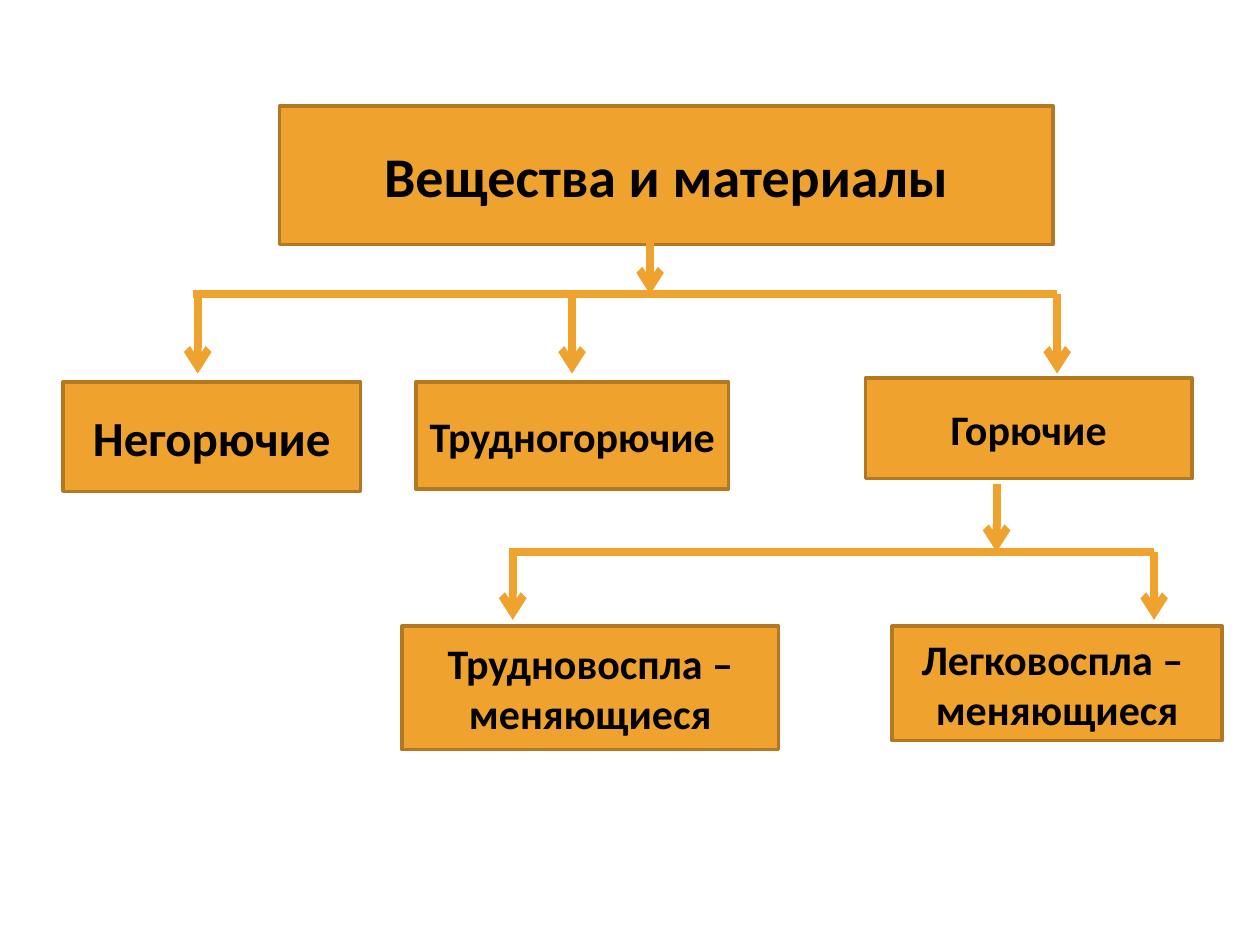
from lxml import etree
from pptx import Presentation
from pptx.dml.color import RGBColor
from pptx.enum.shapes import MSO_CONNECTOR, MSO_SHAPE
from pptx.enum.text import MSO_ANCHOR, PP_ALIGN
from pptx.oxml.ns import qn
from pptx.util import Pt

ORANGE, BROWN, BLACK = "F0A22E", "B27822", "000000"


def paint(color_format, hex_color):
    color_format.rgb = RGBColor.from_string(hex_color)


def fill_box(box, lines, size):
    box.fill.solid()
    paint(box.fill.fore_color, ORANGE)
    paint(box.line.color, BROWN)
    box.line.width = Pt(2)
    frame = box.text_frame
    frame.text = "\n".join(lines)
    frame.word_wrap = True
    frame.vertical_anchor = MSO_ANCHOR.MIDDLE
    for paragraph in frame.paragraphs:
        paragraph.alignment = PP_ALIGN.CENTER
        for name, value in {"name": "Calibri", "size": Pt(size), "bold": True}.items():
            setattr(paragraph.font, name, value)
        paint(paragraph.font.color, BLACK)


prs = Presentation()
prs.slide_width, prs.slide_height = Pt(720), Pt(540)
slide = prs.slides.add_slide(prs.slide_layouts[5])

# Root of the classification
root = slide.shapes.title
root_place = {"left": 159.8, "top": 60.5, "width": 442, "height": 79.2}
for name, value in root_place.items():
    setattr(root, name, Pt(value))
fill_box(root, ["Вещества и материалы"], 32)

# Classes and subclasses: left, top, width, height, text size, lines
categories = [
    (36, 218.2, 170, 62.6, 28, ["Негорючие"]),
    (229.7, 357.8, 215.3, 70.6, 24, ["Трудновоспла –", "меняющиеся"]),
    (509.8, 357.8, 188.6, 65.5, 24, ["Легковоспла – ", "меняющиеся"]),
    (237.6, 218.2, 178.8, 61.2, 24, ["Трудногорючие"]),
    (494.6, 216, 186.5, 57.6, 24, ["Горючие"]),
]
for *place, size, lines in categories:
    category = slide.shapes.add_shape(MSO_SHAPE.RECTANGLE, *map(Pt, place))
    category.shadow.inherit = False
    fill_box(category, lines, size)

# Branches: stem x, stem top, bar y, bar left, bar right, drop xs, drop end
branches = [
    (371.5, 122.4, 168.2, 110.2, 604.1, [113, 326.9, 604.1], 213.5),
    (569.5, 276.5, 315.4, 290.9, 659.5, [293, 659.5], 354.2),
]
for stem_x, stem_top, bar_y, bar_left, bar_right, drop_xs, drop_end in branches:
    segments = [
        (stem_x, stem_top, stem_x, bar_y),
        (bar_left, bar_y, bar_right, bar_y),
    ] + [(x, bar_y, x, drop_end) for x in drop_xs]
    for x1, y1, x2, y2 in segments:
        branch = slide.shapes.add_connector(
            MSO_CONNECTOR.STRAIGHT, Pt(x1), Pt(y1), Pt(x2), Pt(y2))
        paint(branch.line.color, ORANGE)
        branch.line.width = Pt(4.5)
        if x1 == x2:  # only vertical segments carry an arrowhead
            etree.SubElement(branch.line._get_or_add_ln(), qn("a:tailEnd"), type="arrow")
        etree.SubElement(branch._element.spPr, qn("a:effectLst"))

prs.save("out.pptx")
